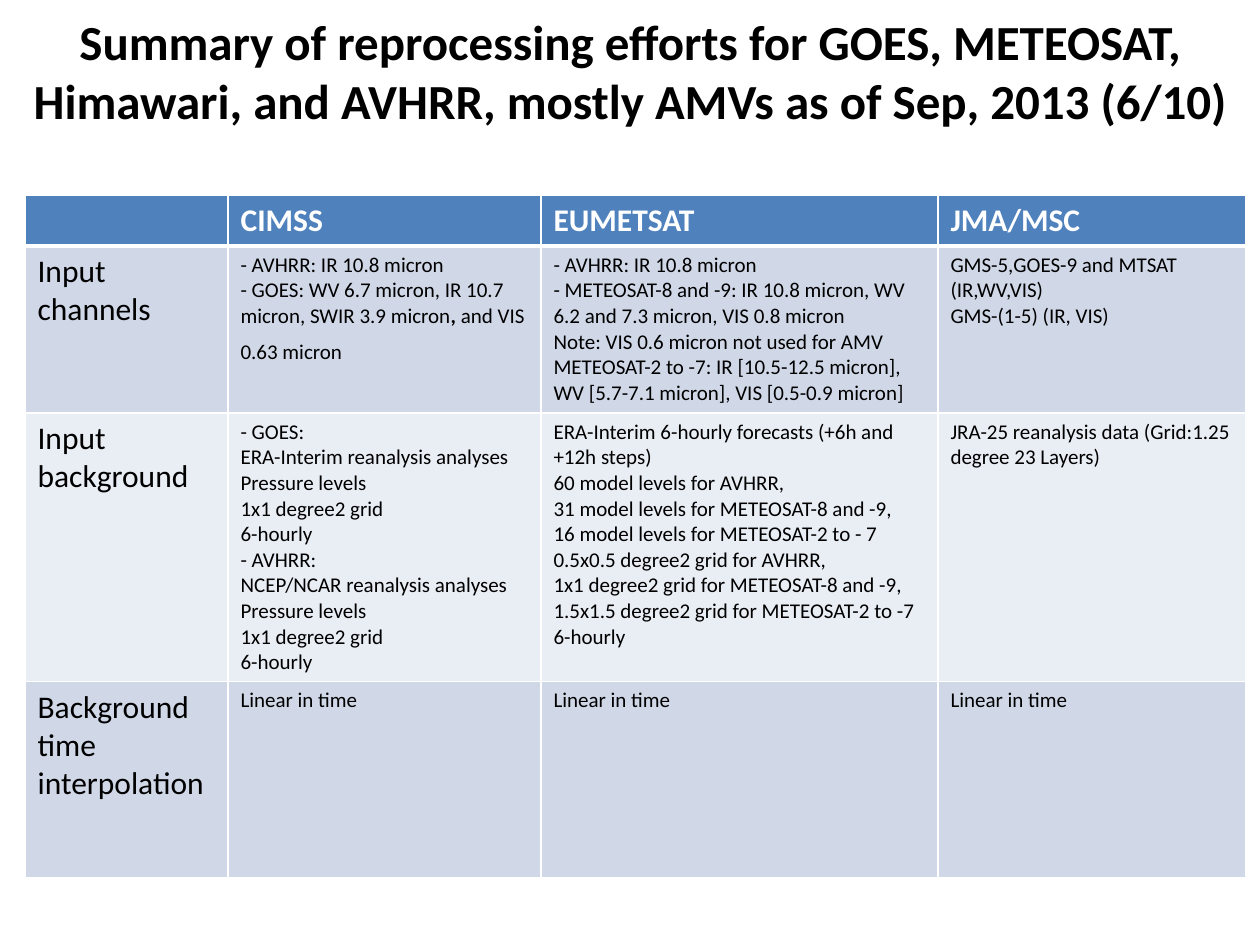
import pptx
import pptx.util
import pptx.dml.color
import pptx.enum.text
import pptx.oxml
import pptx.oxml.ns

TITLE = ("Summary of reprocessing efforts for GOES, METEOSAT, Himawari, "
         "and AVHRR, mostly AMVs as of Sep, 2013 (6/10)")
HEADS = ["", "CIMSS", "EUMETSAT", "JMA/MSC"]
LINEAR = ["Linear in time"]
GRID = ["Pressure levels", "1x1 degree2 grid", "6-hourly"]
ROWS = [
    ("Input channels", [
        ["- AVHRR: IR 10.8 micron",
         [("- GOES: WV 6.7 micron, IR 10.7 micron, SWIR 3.9 micron", {}),
          (", ", {"bold": True}),
          ("and VIS 0.63 micron ", {}),
          ("\t", {"size": "head"})]],
        ["- AVHRR: IR 10.8 micron",
         "- METEOSAT-8 and -9: IR 10.8 micron, WV 6.2 and 7.3 micron, VIS 0.8 micron",
         "Note: VIS 0.6 micron not used for AMV",
         "METEOSAT-2 to -7: IR [10.5-12.5 micron], WV [5.7-7.1 micron], VIS [0.5-0.9 micron]"],
        ["GMS-5,GOES-9 and MTSAT (IR,WV,VIS)", "GMS-(1-5) (IR, VIS)"]]),
    ("Input background", [
        ["- GOES:", "ERA-Interim reanalysis analyses", *GRID,
         "- AVHRR:", "NCEP/NCAR reanalysis analyses", *GRID],
        ["ERA-Interim 6-hourly forecasts (+6h and +12h steps)",
         "60 model levels for AVHRR,",
         "31 model levels for METEOSAT-8 and -9,",
         "16 model levels for METEOSAT-2 to - 7",
         "0.5x0.5 degree2 grid for AVHRR,",
         "1x1 degree2 grid for METEOSAT-8 and -9,",
         "1.5x1.5 degree2 grid for METEOSAT-2 to -7",
         "6-hourly"],
        ["JRA-25 reanalysis data (Grid:1.25 degree 23 Layers)"]]),
    ("Background time interpolation", [LINEAR, LINEAR, LINEAR]),
]

THEME = {
    "font": "Calibri",
    "size": {"title": 28, "head": 18, "body": 12},
    "ink": "000000", "white": "FFFFFF", "blue": "4F81BD",
    "bands": ["D0D8E8", "E9EDF4"],
}
PX = 914400 // 126
WIDE, HIGH = 1260, 945
COLS = [203, 313, 397, 308]
TALL = [49, 167, 268, 196]
LEFT, TOP = 25, 195


def px(num):
    return pptx.util.Emu(num * PX)


def color(name):
    return pptx.dml.color.RGBColor.from_string(THEME.get(name, name))


def write(frame, lines, size="body", ink="ink", bold=False, align="LEFT"):
    for num, line in enumerate(lines):
        para = frame.paragraphs[0] if num == 0 else frame.add_paragraph()
        para.alignment = getattr(pptx.enum.text.PP_ALIGN, align)
        for text, own in [(line, {})] if isinstance(line, str) else line:
            run = para.add_run()
            run.text = text
            font = run.font
            font.name = THEME["font"]
            font.size = pptx.util.Pt(THEME["size"][own.get("size", size)])
            font.bold = own.get("bold", bold)
            font.color.rgb = color(ink)


def edge(cell, base):
    props = cell._tc.get_or_add_tcPr()
    sides = [("lnL", 1), ("lnR", 1), ("lnT", 1), ("lnB", base)]
    for spot, (tag, wide) in enumerate(sides):
        props.insert(spot, pptx.oxml.parse_xml(
            f'<a:{tag} {pptx.oxml.ns.nsdecls("a")} w="{wide * 12700}">'
            f'<a:solidFill><a:srgbClr val="{THEME["white"]}"/></a:solidFill></a:{tag}>'))


def paint(cell, fill, base=1):
    cell.fill.solid()
    cell.fill.fore_color.rgb = color(fill)
    edge(cell, base)


def main():
    deck = pptx.Presentation()
    deck.slide_width, deck.slide_height = px(WIDE), px(HIGH)
    slide = deck.slides.add_slide(deck.slide_layouts[5])

    title = slide.shapes.title
    title.left, title.top, title.width, title.height = map(px, (0, 6, WIDE, 129))
    title.text_frame.vertical_anchor = pptx.enum.text.MSO_ANCHOR.MIDDLE
    write(title.text_frame, [TITLE], size="title", bold=True, align="CENTER")

    table = slide.shapes.add_table(
        len(TALL), len(COLS), px(LEFT), px(TOP), px(sum(COLS)), px(sum(TALL))).table
    for col, wide in zip(table.columns, COLS):
        col.width = px(wide)
    for row, tall in zip(table.rows, TALL):
        row.height = px(tall)

    for col, head in enumerate(HEADS):
        cell = table.cell(0, col)
        paint(cell, "blue", base=3)
        if head:
            write(cell.text_frame, [head], size="head", ink="white", bold=True)

    for row, (label, items) in enumerate(ROWS, 1):
        for col, lines in enumerate([[label], *items]):
            cell = table.cell(row, col)
            paint(cell, THEME["bands"][(row - 1) % 2])
            if row == 1:
                edge_top = cell._tc.tcPr.find(pptx.oxml.ns.qn("a:lnT"))
                edge_top.set("w", str(3 * 12700))
            write(cell.text_frame, lines, size="body" if col else "head")

    deck.save("out.pptx")


if __name__ == "__main__":
    main()
